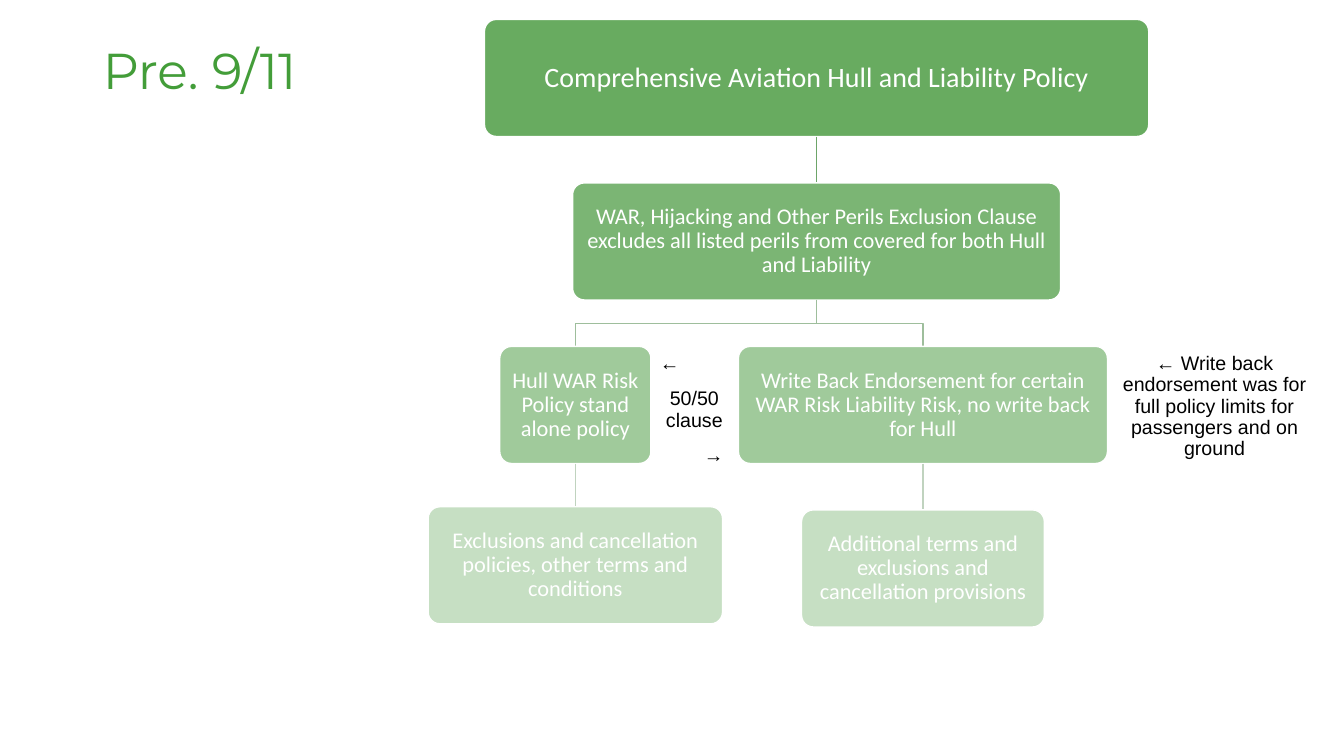
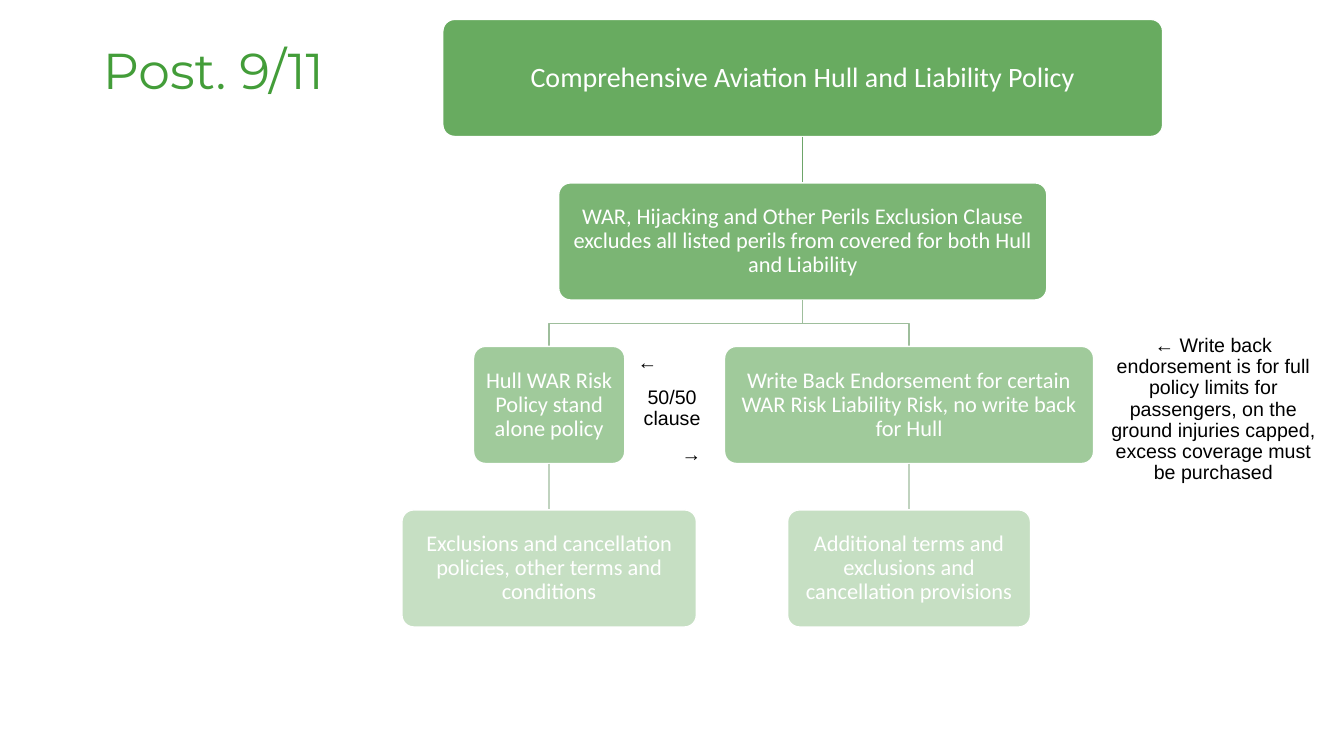
"""Build two slides comparing aviation war risk cover before and after 9/11."""
from dataclasses import dataclass

from lxml import etree
from pptx import Presentation
from pptx.dml.color import RGBColor
from pptx.enum.shapes import MSO_CONNECTOR, MSO_SHAPE
from pptx.enum.text import MSO_ANCHOR, MSO_AUTO_SIZE, PP_ALIGN
from pptx.oxml.ns import qn
from pptx.util import Cm, Pt

LEFT, CENTER, RIGHT = PP_ALIGN.LEFT, PP_ALIGN.CENTER, PP_ALIGN.RIGHT
TOP, MIDDLE = MSO_ANCHOR.TOP, MSO_ANCHOR.MIDDLE
ROUNDED = MSO_SHAPE.ROUNDED_RECTANGLE
STRAIGHT = MSO_CONNECTOR.STRAIGHT
NO_FIT = MSO_AUTO_SIZE.NONE

COLORS = {"title": "439D39", "box": "439639", "white": "FFFFFF", "black": "000000"}
LINK_COLORS = ("", "6DA569", "9EBE9C", "C0D3BF")
BOX_OPACITY = (80, 70, 50, 30)
TITLE_FONT, BOX_FONT, NOTE_FONT = "Montserrat", "Calibri", "Arial"
TITLE_ONLY = 5
FIRST_ROW, ROW_PITCH, BOX_HEIGHT = 0.49, 4.12, 2.95


@dataclass(frozen=True)
class Node:
    text: str
    center: float
    width: float
    level: int
    children: tuple["Node", ...] = ()
    size: int = 16
    lift: float = 0

    @property
    def top(self) -> float:
        return FIRST_ROW + self.level * ROW_PITCH - self.lift

    @property
    def bottom(self) -> float:
        return self.top + BOX_HEIGHT


@dataclass(frozen=True)
class Note:
    lines: tuple[tuple[str, PP_ALIGN], ...]
    left: float
    top: float
    width: float
    height: float


@dataclass(frozen=True)
class Chart:
    title: str
    center: float
    hull_center: float
    write_back_center: float
    root_width: float
    notes: tuple[Note, ...]
    exclusions_lift: float = 0


CLAUSE_LINES = (("←", LEFT), ("50/50 clause", CENTER), ("→ ", RIGHT))

CHARTS = (
    Chart("Pre. 9/11", 20.58, 14.5, 23.26, 16.74, (
        Note((("← Write back endorsement was for full policy limits for "
               "passengers and on ground", CENTER),), 27.74, 8.79, 5.74, 2.77),
        Note(CLAUSE_LINES, 16.38, 8.79, 2.24, 2.06),
    ), exclusions_lift=0.08),
    Chart("Post. 9/11", 20.23, 13.84, 22.91, 18.14, (
        Note(CLAUSE_LINES, 15.82, 8.76, 2.24, 2.06),
        Note((("← Write back endorsement is for full policy limits for "
               "passengers, on the ground injuries capped, excess coverage "
               "must be purchased", CENTER),), 27.71, 8.33, 5.74, 2.95),
    )),
)


def color(name: str) -> RGBColor:
    return RGBColor.from_string(COLORS.get(name, name))


def write_text(shape, *lines: tuple[str, PP_ALIGN], font: str, size: int, fill: str,
               anchor=TOP, space_before: float = 0, inset: float | None = None) -> None:
    frame = shape.text_frame
    frame.word_wrap = True
    frame.auto_size = NO_FIT
    frame.vertical_anchor = anchor
    if inset is not None:
        frame.margin_left = frame.margin_right = Cm(inset)
        frame.margin_top = frame.margin_bottom = Cm(inset)
    for index, (text, alignment) in enumerate(lines):
        paragraph = frame.add_paragraph() if index else frame.paragraphs[0]
        paragraph.alignment = alignment
        paragraph.line_spacing = 0.9
        paragraph.space_before = Pt(space_before if index else 0)
        run = paragraph.add_run()
        run.text = text
        run.font.name = font
        run.font.size = Pt(size)
        run.font.color.rgb = color(fill)


def draw_box(slide, node: Node) -> None:
    shape = slide.shapes.add_shape(ROUNDED, Cm(node.center - node.width / 2), Cm(node.top),
                                   Cm(node.width), Cm(BOX_HEIGHT))
    shape.adjustments[0] = 0.1
    shape.shadow.inherit = False
    shape.fill.solid()
    shape.fill.fore_color.rgb = color("box")
    fill = shape.element.spPr.find(f"{qn('a:solidFill')}/{qn('a:srgbClr')}")
    etree.SubElement(fill, qn("a:alpha"), val=str(BOX_OPACITY[node.level] * 1000))
    shape.line.color.rgb = color("white")
    shape.line.width = Pt(1)
    write_text(shape, (node.text, CENTER), font=BOX_FONT, size=node.size, fill="white",
               anchor=MIDDLE, inset=0.18)


def draw_link(slide, parent: Node, child: Node) -> None:
    start = (Cm(parent.center), Cm(parent.bottom))
    end = (Cm(child.center), Cm(child.top))
    if parent.center == child.center:
        link = slide.shapes.add_connector(STRAIGHT, *start, *end)
        etree.SubElement(link.element.spPr, qn("a:effectLst"))
    else:
        middle = Cm((parent.bottom + child.top) / 2)
        builder = slide.shapes.build_freeform(*start)
        builder.add_line_segments([(start[0], middle), (end[0], middle), end], close=False)
        link = builder.convert_to_shape()
        link.fill.background()
        link.shadow.inherit = False
    link.line.color.rgb = color(LINK_COLORS[child.level])
    link.line.width = Pt(1)


def draw_tree(slide, node: Node) -> None:
    draw_box(slide, node)
    for child in node.children:
        draw_link(slide, node, child)
        draw_tree(slide, child)


def policy_tree(chart: Chart) -> Node:
    exclusions = Node("Exclusions and cancellation policies, other terms and conditions",
                      chart.hull_center, 7.42, 3, lift=chart.exclusions_lift)
    terms = Node("Additional terms and exclusions and cancellation provisions",
                 chart.write_back_center, 6.12, 3)
    hull = Node("Hull WAR Risk Policy stand alone policy", chart.hull_center, 3.81, 2,
                (exclusions,))
    write_back = Node("Write Back Endorsement for certain WAR Risk Liability Risk, "
                      "no write back for Hull", chart.write_back_center, 9.3, 2, (terms,))
    clause = Node("WAR, Hijacking and Other Perils Exclusion Clause excludes all listed "
                  "perils from covered for both Hull and Liability", chart.center, 12.3, 1,
                  (hull, write_back))
    return Node("Comprehensive Aviation Hull and Liability Policy", chart.center,
                chart.root_width, 0, (clause,), size=20)


def draw_note(slide, note: Note) -> None:
    box = slide.shapes.add_textbox(Cm(note.left), Cm(note.top), Cm(note.width), Cm(note.height))
    write_text(box, *note.lines, font=NOTE_FONT, size=14, fill="black", space_before=10)


def build_slide(presentation, chart: Chart) -> None:
    slide = presentation.slides.add_slide(presentation.slide_layouts[TITLE_ONLY])
    title = slide.shapes.title
    title.left, title.top = Cm(2.34), Cm(0)
    title.width, title.height = Cm(29.21), Cm(3.68)
    write_text(title, (chart.title, LEFT), font=TITLE_FONT, size=36, fill="title", anchor=MIDDLE)
    draw_tree(slide, policy_tree(chart))
    for note in chart.notes:
        draw_note(slide, note)


def main() -> None:
    presentation = Presentation()
    presentation.slide_width, presentation.slide_height = Cm(33.87), Cm(19.05)
    for chart in CHARTS:
        build_slide(presentation, chart)
    presentation.save("out.pptx")


if __name__ == "__main__":
    main()
